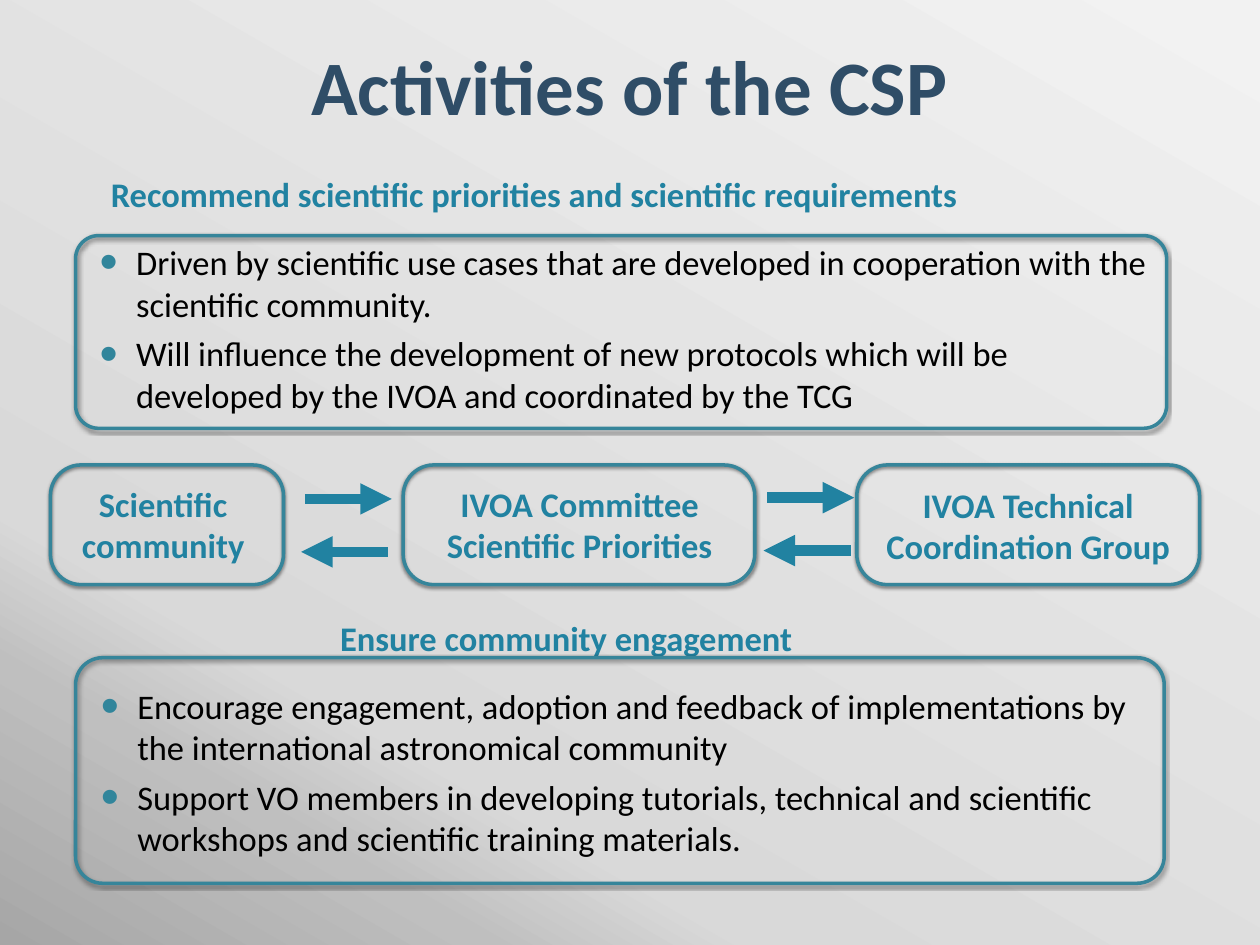
from lxml import etree
from pptx import Presentation
from pptx.dml.color import RGBColor
from pptx.enum.shapes import MSO_CONNECTOR, MSO_SHAPE
from pptx.enum.text import MSO_ANCHOR, MSO_AUTO_SIZE, PP_ALIGN
from pptx.oxml import parse_xml
from pptx.oxml.ns import nsdecls, qn
from pptx.util import Inches, Pt

LEFT, CENTER = PP_ALIGN.LEFT, PP_ALIGN.CENTER
MIDDLE = MSO_ANCHOR.MIDDLE
NO_FIT, GROW = MSO_AUTO_SIZE.NONE, MSO_AUTO_SIZE.SHAPE_TO_FIT_TEXT
ROUNDED, STRAIGHT = MSO_SHAPE.ROUNDED_RECTANGLE, MSO_CONNECTOR.STRAIGHT

NAVY = RGBColor(0x2F, 0x4D, 0x67)
TEAL = RGBColor(0x21, 0x82, 0xA1)
FRAME = RGBColor(0x36, 0x85, 0x9A)
BULLET = RGBColor(0x31, 0x85, 0x9B)
BLACK = RGBColor(0, 0, 0)
BACKGROUND_STOPS = [(0, "F2F2F2"), (74, "D9D9D9"), (83, "BFBFBF"), (100, "A6A6A6")]


def write_text(shape, box, paragraphs, size=19.7, color=TEAL, bold=True, align=LEFT,
               inset=0.04, fit=GROW, line_spacing=1.0, bullets=False):
    """Place a text shape and fill it with formatted paragraphs."""
    shape.left, shape.top, shape.width, shape.height = [Inches(v) for v in box]
    frame = shape.text_frame
    frame.word_wrap = True
    frame.auto_size = fit
    frame.vertical_anchor = MIDDLE
    frame.margin_left = frame.margin_right = Inches(inset)
    frame.margin_top = frame.margin_bottom = Inches(0.04)
    for index, text in enumerate(paragraphs):
        paragraph = frame.paragraphs[0] if index == 0 else frame.add_paragraph()
        if bullets:
            properties = paragraph._p.get_or_add_pPr()
            properties.set("marL", str(Inches(0.29)))
            properties.set("indent", str(-Inches(0.29)))
            for xml in (f'<a:buClr {nsdecls("a")}><a:srgbClr val="{BULLET}"/></a:buClr>',
                        f'<a:buSzPct {nsdecls("a")} val="150000"/>',
                        f'<a:buFont {nsdecls("a")} typeface="Arial"/>',
                        f'<a:buChar {nsdecls("a")} char="•"/>'):
                properties.append(parse_xml(xml))
        paragraph.alignment = align
        paragraph.line_spacing = line_spacing
        paragraph.space_before = Pt(4.9 if index else 0)
        run = paragraph.add_run()
        run.text = text
        run.font.name = "Calibri"
        run.font.size = Pt(size)
        run.font.bold = bold
        run.font.color.rgb = color


def add_frame(slide, box, roundness):
    """Add an unfilled rounded outline with a soft shadow."""
    shape = slide.shapes.add_shape(ROUNDED, *[Inches(v) for v in box])
    shape.adjustments[0] = roundness
    shape.fill.background()
    shape.line.color.rgb = FRAME
    shape.line.width = Pt(2)
    shape.shadow.inherit = False
    shape._element.spPr.find(qn("a:effectLst")).append(parse_xml(
        f'<a:outerShdw {nsdecls("a")} blurRad="{Pt(2)}" dist="{Pt(1)}" dir="5400000" '
        'rotWithShape="0"><a:srgbClr val="000000"><a:alpha val="50000"/></a:srgbClr>'
        '</a:outerShdw>'))


presentation = Presentation()
presentation.slide_width = Inches(10)
presentation.slide_height = Inches(7.5)
slide = presentation.slides.add_slide(presentation.slide_layouts[3])

# Background gradient
background = slide.background.fill
background.gradient()
background.gradient_angle = 240
stops = slide._element.cSld.find(".//" + qn("a:gsLst"))
for stop in list(stops):
    stops.remove(stop)
for position, color in BACKGROUND_STOPS:
    stop = etree.SubElement(stops, qn("a:gs"), pos=str(position * 1000))
    etree.SubElement(stop, qn("a:srgbClr"), val=color)

# Title
write_text(slide.shapes.title, (1.01, 0.18, 7.98, 1.08), ["Activities of the CSP"], size=44,
           color=NAVY, align=CENTER, inset=0.1, fit=NO_FIT, line_spacing=0.9)

# Headings, bullet lists and their frames
sections = [
    ("Recommend scientific priorities and scientific requirements",
     (0.84, 1.33, 8.27, 0.41), (0.75, 1.87, 8.5, 1.47), (0.6, 1.87, 8.66, 1.53),
     ["Driven by scientific use cases that are developed in cooperation with the "
      "scientific community.",
      "Will influence the development of new protocols which will be developed by the "
      "IVOA and coordinated by the TCG"]),
    ("Ensure community engagement",
     (2.66, 4.86, 4.46, 0.41), (0.76, 5.39, 8.5, 1.47), (0.6, 5.22, 8.64, 1.79),
     ["Encourage engagement, adoption and feedback of implementations by the "
      "international astronomical community",
      "Support VO members in developing tutorials, technical and scientific workshops "
      "and scientific training materials."]),
]
for number, (heading, heading_box, list_box, frame_box, items) in enumerate(sections, start=1):
    write_text(slide.placeholders[number], list_box, items, color=BLACK, bold=False,
               bullets=True)
    write_text(slide.shapes.add_textbox(0, 0, 0, 0), heading_box, [heading])
    add_frame(slide, frame_box, 0.12)

# Groups that exchange priorities
groups = [
    ("Scientific community", (0.36, 3.79, 1.87, 0.74), 0.4, 1.85),
    ("IVOA Committee Scientific Priorities", (3.27, 3.79, 2.66, 0.74), 3.2, 2.79),
    ("IVOA Technical Coordination Group", (6.79, 3.8, 2.74, 0.74), 6.8, 2.72),
]
for label, label_box, left, width in groups:
    write_text(slide.shapes.add_textbox(0, 0, 0, 0), label_box, [label], align=CENTER)
    add_frame(slide, (left, 3.69, width, 0.95), 0.256)

# Arrows in both directions between the groups
arrows = [(6.09, 3.95, "a:tailEnd"), (2.42, 3.96, "a:tailEnd"),
          (6.06, 4.37, "a:headEnd"), (2.39, 4.38, "a:headEnd")]
for left, top, arrow_end in arrows:
    arrow = slide.shapes.add_connector(STRAIGHT, Inches(left), Inches(top),
                                       Inches(left + 0.69), Inches(top))
    arrow.line.color.rgb = TEAL
    arrow.line.width = Pt(6)
    properties = arrow._element.spPr
    etree.SubElement(properties.find(qn("a:ln")), qn(arrow_end), type="triangle")
    etree.SubElement(properties, qn("a:effectLst"))

presentation.save("out.pptx")
